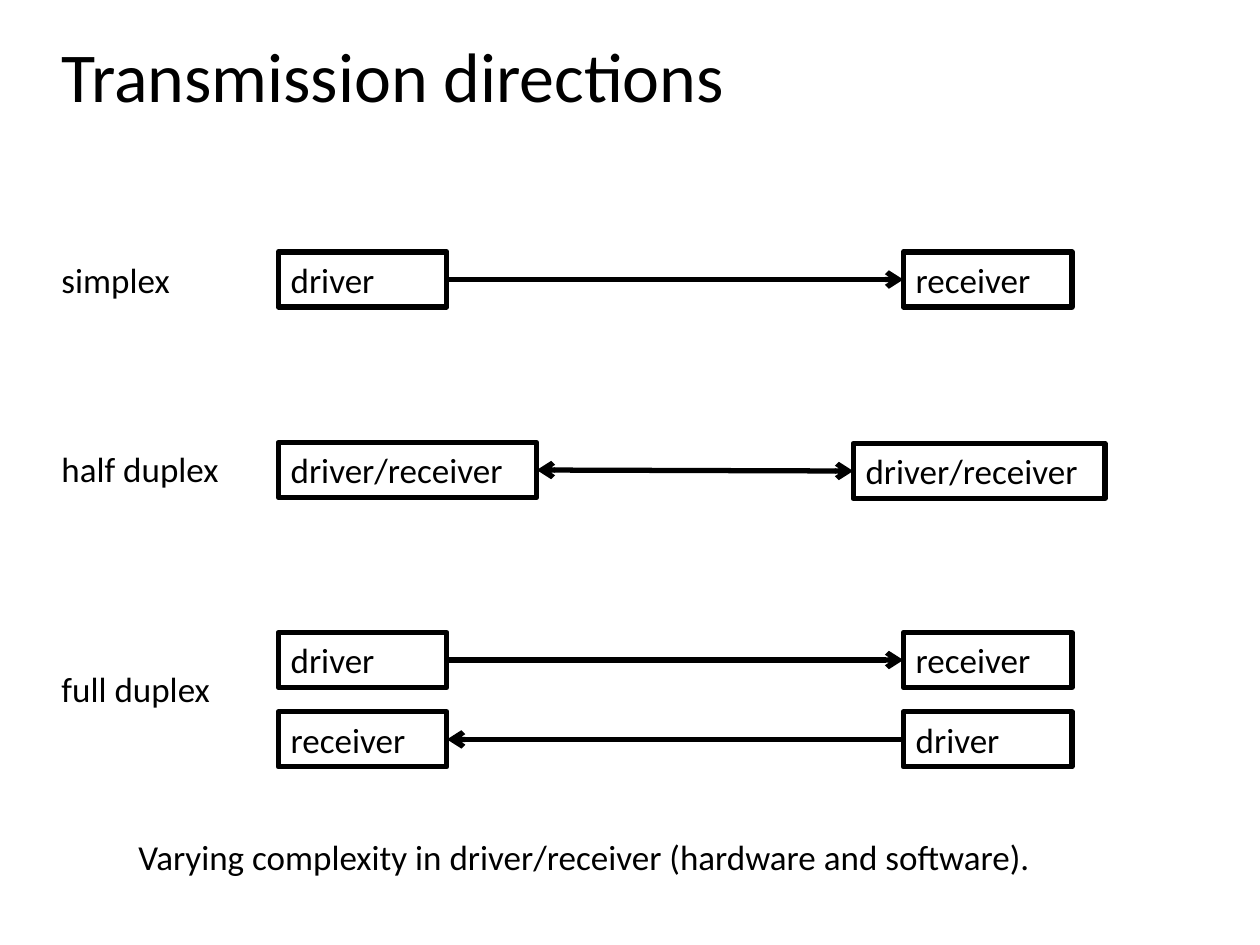
from dataclasses import dataclass

import pptx
import pptx.dml.color
import pptx.enum.shapes
import pptx.enum.text
import pptx.oxml
import pptx.oxml.ns
import pptx.util
from pptx.util import Cm

LEFT_SIDE, RIGHT_SIDE = 1, 3


@dataclass(frozen=True)
class Theme:
    font: str = "Calibri"
    ink: pptx.dml.color.RGBColor = pptx.dml.color.RGBColor(0, 0, 0)
    title: int = 40
    body: int = 20
    line: int = 3


class Diagram:
    """Holds the theme and the slide being drawn."""

    def __init__(self, slide, theme):
        self.s = slide
        self.theme = theme

    def set_text(self, sp, text, size, wrap=True):
        tf = sp.text_frame
        frame_format = {
            "word_wrap": wrap,
            "vertical_anchor": pptx.enum.text.MSO_ANCHOR.TOP,
            "auto_size": pptx.enum.text.MSO_AUTO_SIZE.SHAPE_TO_FIT_TEXT,
        }
        for name, value in frame_format.items():
            setattr(tf, name, value)
        p = tf.paragraphs[0]
        p.alignment = pptx.enum.text.PP_ALIGN.LEFT
        r = p.add_run()
        r.text = text
        font_format = {"name": self.theme.font, "size": pptx.util.Pt(size)}
        for name, value in font_format.items():
            setattr(r.font, name, value)
        r.font.color.rgb = self.theme.ink

    def outline(self, sp):
        sp.line.width = pptx.util.Pt(self.theme.line)
        sp.line.color.rgb = self.theme.ink

    def text(self, text, left, top, width, height=1.11, size=None, wrap=True):
        sp = self.s.shapes.add_textbox(Cm(left), Cm(top), Cm(width), Cm(height))
        self.set_text(sp, text, size or self.theme.body, wrap)

    def box(self, text, left, top, width):
        sp = self.s.shapes.add_shape(
            pptx.enum.shapes.MSO_SHAPE.RECTANGLE,
            Cm(left), Cm(top), Cm(width), Cm(1.11))
        sp.shadow.inherit = False
        sp.fill.background()
        self.outline(sp)
        self.set_text(sp, text, self.theme.body)
        return sp

    def arrow(self, start, start_side, end, end_side, ends=("tailEnd",)):
        """Join two boxes; ends names the line ends that carry an arrowhead."""
        c = self.s.shapes.add_connector(
            pptx.enum.shapes.MSO_CONNECTOR.STRAIGHT, 0, 0, 0, 0)
        c.begin_connect(start, start_side)
        c.end_connect(end, end_side)
        self.outline(c)
        sp_pr = c.element.spPr
        ln = sp_pr.find(pptx.oxml.ns.qn("a:ln"))
        for end_name in ends:
            tag = pptx.oxml.ns.qn(f"a:{end_name}")
            ln.append(ln.makeelement(tag, {"type": "arrow"}))
        sp_pr.append(sp_pr.makeelement(pptx.oxml.ns.qn("a:effectLst"), {}))


def main():
    prs = pptx.Presentation()
    prs.slide_width, prs.slide_height = Cm(25.4), Cm(19.05)
    theme = Theme()
    d = Diagram(prs.slides.add_slide(prs.slide_layouts[6]), theme)

    margin, left_col, right_col, box_width = 0.99, 5.61, 18.21, 3.4
    d.text("Transmission directions", margin, 0.53, 14.02, 1.96,
           size=theme.title, wrap=False)
    modes = {"simplex": 5.08, "half duplex": 8.89, "full duplex": 13.34}
    for mode, top in modes.items():
        d.text(mode, margin, top, 4.57)

    # One-way links of simplex and full duplex
    for top, left_role, right_role in [
        (5.08, "driver", "receiver"),
        (12.75, "driver", "receiver"),
        (14.35, "receiver", "driver"),
    ]:
        left = d.box(left_role, left_col, top, box_width)
        right = d.box(right_role, right_col, top, box_width)
        if left_role == "driver":
            d.arrow(left, RIGHT_SIDE, right, LEFT_SIDE)
        else:
            d.arrow(right, LEFT_SIDE, left, RIGHT_SIDE)

    # Shared two-way link of half duplex
    left = d.box("driver/receiver", left_col, 8.92, 5.21)
    right = d.box("driver/receiver", 17.2, 8.94, 5.08)
    d.arrow(left, RIGHT_SIDE, right, LEFT_SIDE, ends=("headEnd", "tailEnd"))

    d.text("Varying complexity in driver/receiver (hardware and software).",
           2.54, 16.71, 20.32)
    prs.save("out.pptx")


if __name__ == "__main__":
    main()
